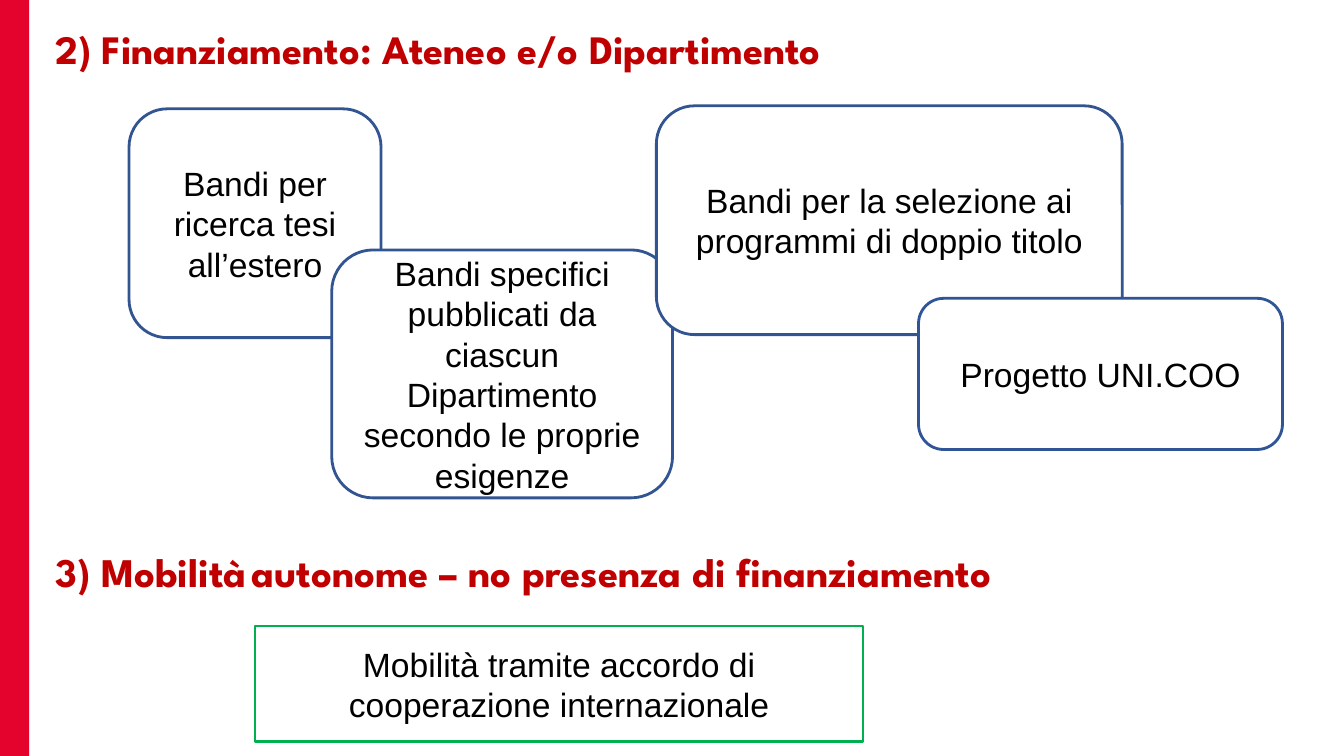
from pptx import Presentation
from pptx.dml.color import RGBColor
from pptx.enum.shapes import MSO_SHAPE
from pptx.enum.text import MSO_ANCHOR, PP_ALIGN
from pptx.util import Inches, Pt

RECT = MSO_SHAPE.RECTANGLE
ROUND = MSO_SHAPE.ROUNDED_RECTANGLE
TOP, MIDDLE = MSO_ANCHOR.TOP, MSO_ANCHOR.MIDDLE
LEFT, CENTER = PP_ALIGN.LEFT, PP_ALIGN.CENTER

COLORS = {
    "white": "FFFFFF",
    "black": "000000",
    "band": "E4032C",
    "title": "C00000",
    "blue": "325491",
    "navy": "2F5597",
    "green": "00B050",
}


def color(name):
    return RGBColor.from_string(COLORS[name])


def write(shape, *runs, font="Arial", size=24, ink="black", bold=False,
          align=CENTER, anchor=MIDDLE, spacing=1.0):
    frame = shape.text_frame
    frame.word_wrap = True
    frame.vertical_anchor = anchor
    para = frame.paragraphs[0]
    para.alignment = align
    para.line_spacing = spacing
    for text in runs:
        run = para.add_run()
        run.text = text
        run.font.name = font
        run.font.size = Pt(size if text.strip() else 14)
        run.font.bold = bold and bool(text.strip())
        run.font.color.rgb = color(ink)


def block(slide, box, kind=RECT, fill="white", line=None):
    shape = slide.shapes.add_shape(kind, *map(Inches, box))
    shape.shadow.inherit = False
    shape.fill.solid()
    shape.fill.fore_color.rgb = color(fill)
    if line:
        shape.line.color.rgb = color(line)
        shape.line.width = Pt(2)
    else:
        shape.line.fill.background()
    return shape


def heading(slide, box, *runs, **style):
    shape = slide.shapes.add_textbox(*map(Inches, box))
    write(shape, *runs, font="League Spartan", ink="title", bold=True,
          align=LEFT, anchor=TOP, **style)


def funding(slide, box):
    left, top, width, height = box
    heading(slide, (left, top, width, 0.6),
            "2) Finanziamento: Ateneo e/o Dipartimento", size=28.8, spacing=0.9)
    cards = [
        (0.83, 0.83, 2.5, 2.27, "blue", "Bandi per ricerca tesi all’estero"),
        (2.84, 2.23, 3.38, 2.46, "blue",
         "Bandi specifici pubblicati da ciascun Dipartimento "
         "secondo le proprie esigenze"),
        (6.06, 0.8, 4.62, 2.27, "blue",
         "Bandi per la selezione ai programmi di doppio titolo"),
        (8.66, 2.71, 3.61, 1.5, "navy", "Progetto UNI.COO"),
    ]
    for x, y, w, h, line, text in cards:
        card = block(slide, (left + x, top + y, w, h), ROUND, line=line)
        write(card, text)


def mobility(slide, box):
    left, top, width, height = box
    heading(slide, (left, top, width, 0.59),
            "3) Mobilità", " ", "autonome – no presenza di finanziamento", size=29)
    card = block(slide, (left + 2.08, top + 0.83, 6.03, 1.15), line="green")
    write(card, "Mobilità tramite accordo di cooperazione internazionale")


def main():
    deck = Presentation()
    deck.slide_width = Inches(13.33)
    deck.slide_height = Inches(7.5)
    slide = deck.slides.add_slide(deck.slide_layouts[6])
    block(slide, (0, 0, 0.29, 7.5), fill="band")
    funding(slide, (0.45, 0.25, 12.79, 4.7))
    mobility(slide, (0.45, 5.38, 12.79, 2))
    deck.save("out.pptx")


if __name__ == "__main__":
    main()
